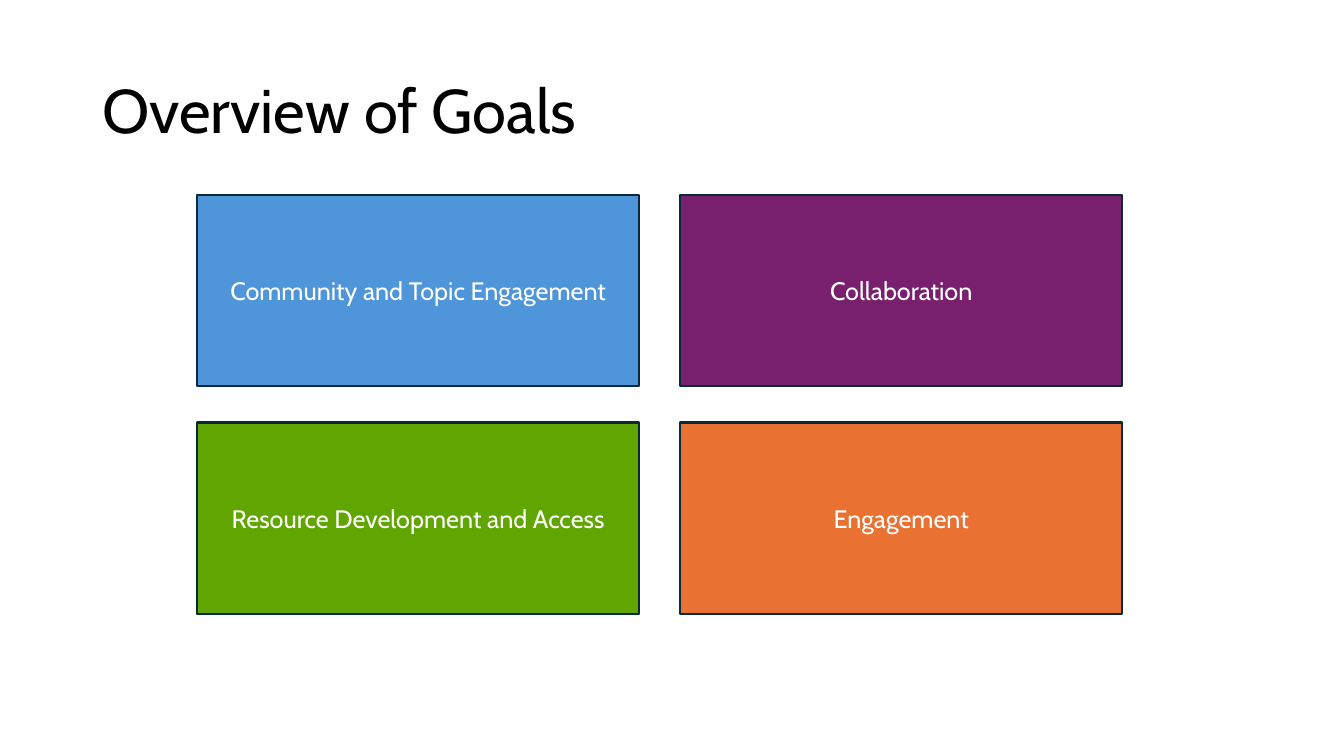
from dataclasses import dataclass

from pptx import Presentation
from pptx.dml.color import RGBColor
from pptx.enum.shapes import MSO_SHAPE
from pptx.enum.text import MSO_ANCHOR, PP_ALIGN
from pptx.util import Pt

RECT = MSO_SHAPE.RECTANGLE
MIDDLE = MSO_ANCHOR.MIDDLE
LEFT = PP_ALIGN.LEFT
CENTER = PP_ALIGN.CENTER


@dataclass(frozen=True)
class Theme:
    font: str = "Cabin"
    title: int = 44
    label: int = 18
    black: str = "000000"
    white: str = "FFFFFF"
    edge: str = "092A39"
    blue: str = "4E95D9"
    plum: str = "78206E"
    green: str = "60A500"
    orange: str = "E97132"


def write(frame, text, *, font, size, color, align=LEFT, spacing=1.0):
    frame.word_wrap = True
    frame.vertical_anchor = MIDDLE
    para = frame.paragraphs[0]
    para.alignment = align
    para.line_spacing = spacing
    run = para.add_run()
    run.text = text
    run.font.name = font
    run.font.size = Pt(size)
    run.font.color.rgb = RGBColor.from_string(color)


class Painter:
    def __init__(self, slide, theme):
        self.slide = slide
        self.theme = theme

    def title(self, text, left, top, width, height):
        box = self.slide.shapes.add_textbox(
            Pt(left), Pt(top), Pt(width), Pt(height))
        write(box.text_frame, text, font=self.theme.font,
              size=self.theme.title, color=self.theme.black, spacing=0.9)

    def card(self, text, fill, left, top, width, height):
        card = self.slide.shapes.add_shape(
            RECT, Pt(left), Pt(top), Pt(width), Pt(height))
        card.shadow.inherit = False
        card.fill.solid()
        card.fill.fore_color.rgb = RGBColor.from_string(fill)
        card.line.color.rgb = RGBColor.from_string(self.theme.edge)
        card.line.width = Pt(1.5)
        write(card.text_frame, text, font=self.theme.font,
              size=self.theme.label, color=self.theme.white, align=CENTER)


def main():
    deck = Presentation()
    deck.slide_width = Pt(960)
    deck.slide_height = Pt(540)
    theme = Theme()
    painter = Painter(deck.slides.add_slide(deck.slide_layouts[6]), theme)
    painter.title("Overview of Goals", 66, 28.8, 828, 104.4)

    goals = [
        ("Community and Topic Engagement", theme.blue),
        ("Collaboration", theme.plum),
        ("Resource Development and Access", theme.green),
        ("Engagement", theme.orange),
    ]
    left, top = 141, 139
    width, height = 315.4, 136.8
    gap_x, gap_y = 29.6, 26
    for index, (text, fill) in enumerate(goals):
        row, col = divmod(index, 2)
        painter.card(text, fill, left + col * (width + gap_x),
                     top + row * (height + gap_y), width, height)

    deck.save("out.pptx")


if __name__ == "__main__":
    main()
